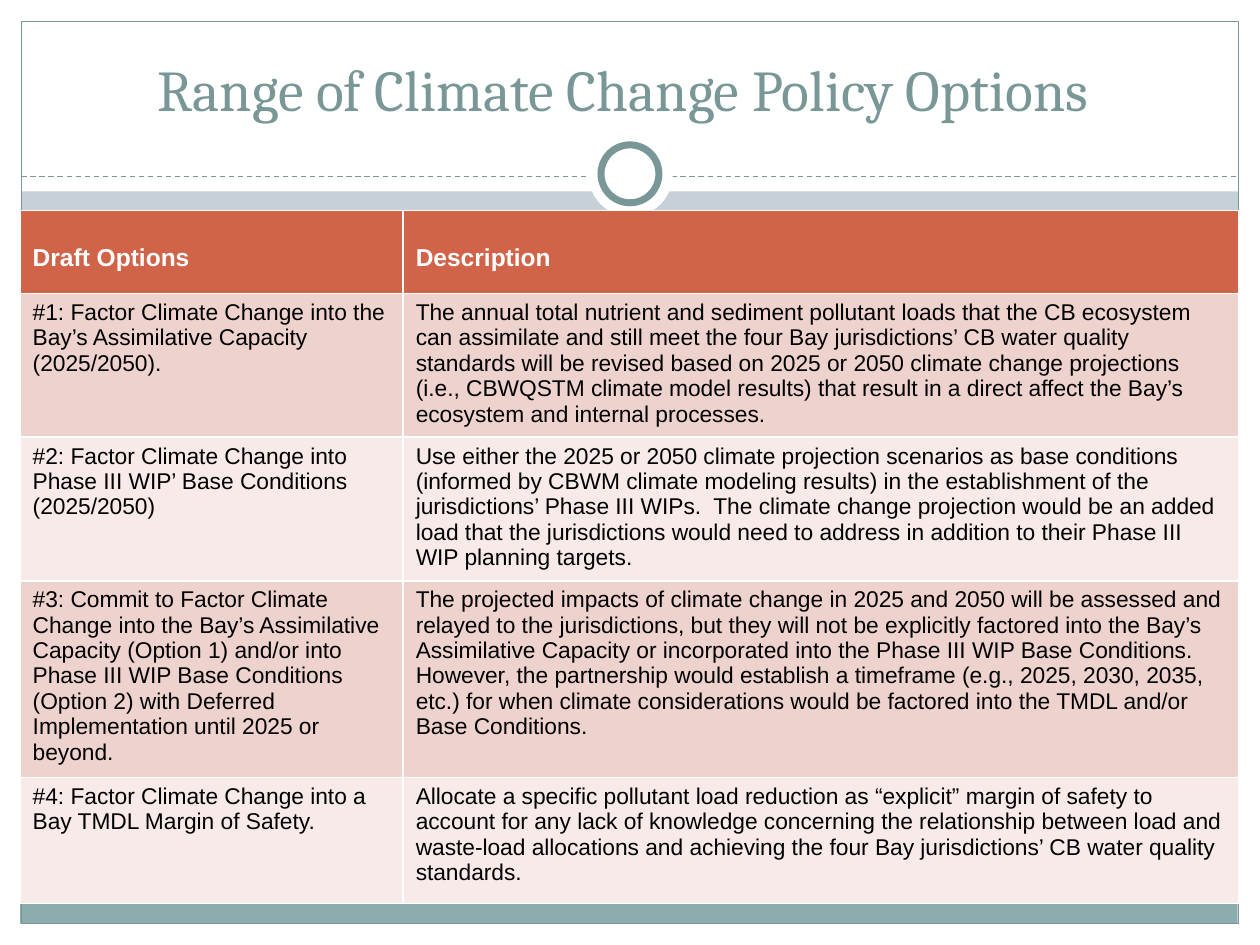
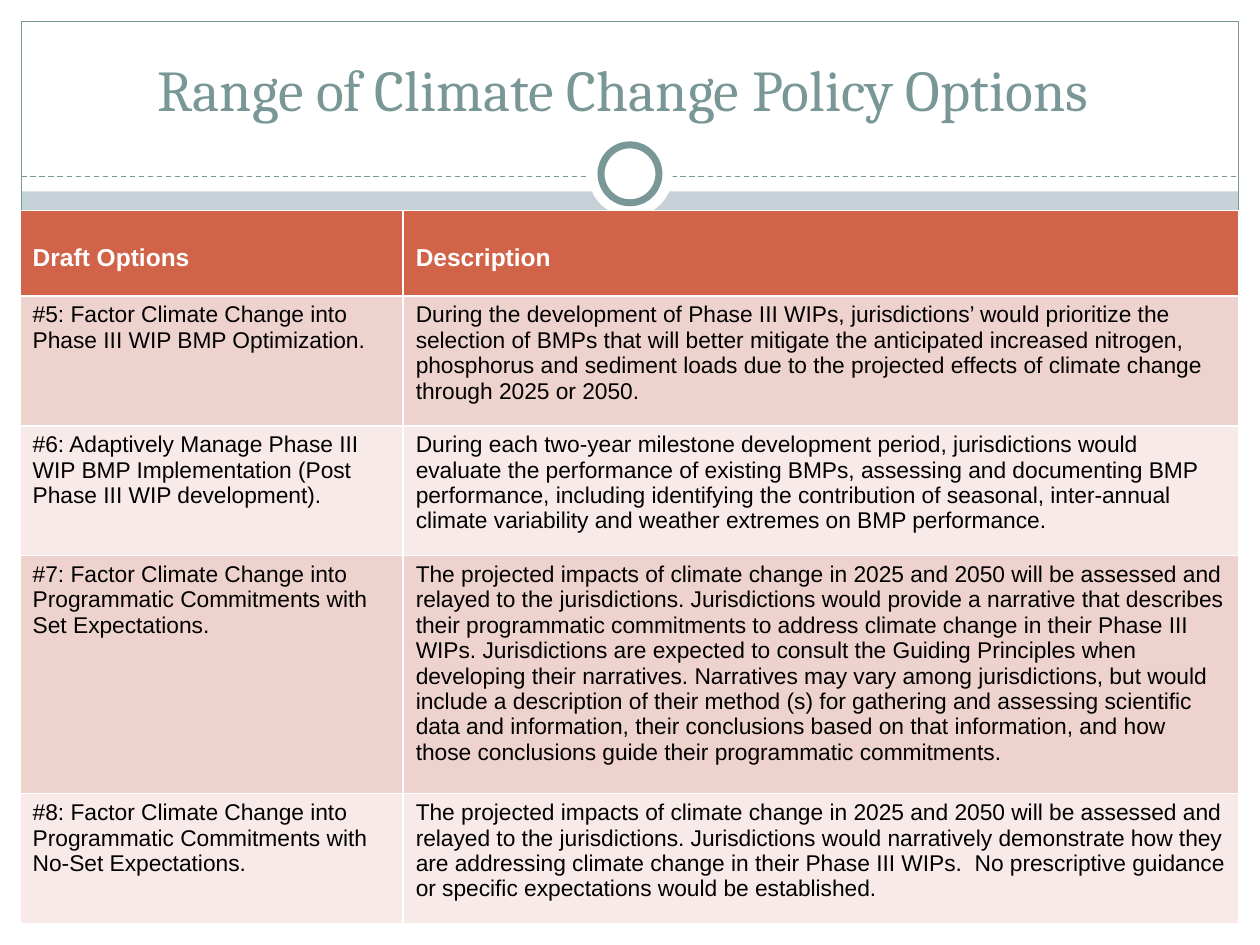
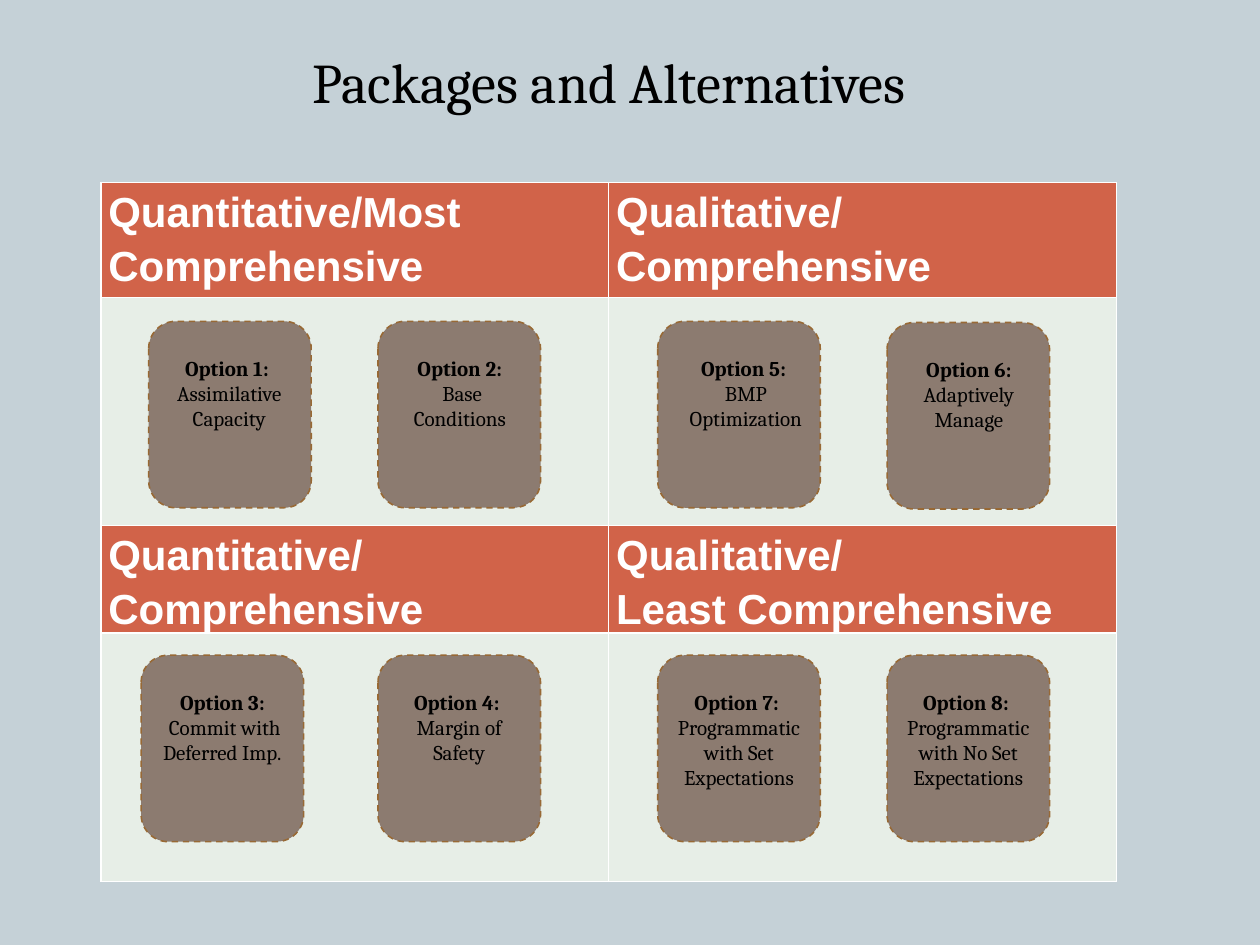
from lxml import etree
from pptx import Presentation
from pptx.dml.color import RGBColor
from pptx.enum import dml, shapes, text
from pptx.oxml import ns
from pptx.util import Inches, Pt

WHITE = RGBColor(0xFF, 0xFF, 0xFF)
BLACK = RGBColor(0, 0, 0)
MIST = RGBColor(0xC5, 0xD1, 0xD7)
TEAL = RGBColor(0x7A, 0x97, 0x98)
SEA = RGBColor(0x8C, 0xAD, 0xAE)
RUST = RGBColor(0xD1, 0x63, 0x49)
ROSE = RGBColor(0xEE, 0xD2, 0xCE)
BLUSH = RGBColor(0xF7, 0xEA, 0xE8)
MINT = RGBColor(0xE7, 0xEE, 0xE7)
TAUPE = RGBColor(0x8C, 0x7B, 0x70)
BROWN = RGBColor(0x98, 0x69, 0x35)
RECT = shapes.MSO_SHAPE.RECTANGLE
OVAL = shapes.MSO_SHAPE.OVAL
ROUND = shapes.MSO_SHAPE.ROUNDED_RECTANGLE
CENTER = text.PP_ALIGN.CENTER

HEADS = ("Draft Options", "Description")
FIRST = [
    ("#1: Factor Climate Change into the Bay’s Assimilative Capacity (2025/2050).",
     "The annual total nutrient and sediment pollutant loads that the CB ecosystem can "
     "assimilate and still meet the four Bay jurisdictions’ CB water quality standards will "
     "be revised based on 2025 or 2050 climate change projections (i.e., CBWQSTM climate "
     "model results) that result in a direct affect the Bay’s ecosystem and internal "
     "processes."),
    ("#2: Factor Climate Change into Phase III WIP’ Base Conditions (2025/2050)",
     "Use either the 2025 or 2050 climate projection scenarios as base conditions (informed "
     "by CBWM climate modeling results) in the establishment of the jurisdictions’ Phase III "
     "WIPs.  The climate change projection would be an added load that the jurisdictions "
     "would need to address in addition to their Phase III WIP planning targets."),
    ("#3: Commit to Factor Climate Change into the Bay’s Assimilative Capacity (Option 1) "
     "and/or into Phase III WIP Base Conditions (Option 2) with Deferred Implementation "
     "until 2025 or beyond.",
     "The projected impacts of climate change in 2025 and 2050 will be assessed and relayed "
     "to the jurisdictions, but they will not be explicitly factored into the Bay’s "
     "Assimilative Capacity or incorporated into the Phase III WIP Base Conditions.  "
     "However, the partnership would establish a timeframe (e.g., 2025, 2030, 2035, etc.) "
     "for when climate considerations would be factored into the TMDL and/or Base "
     "Conditions."),
    ("#4: Factor Climate Change into a Bay TMDL Margin of Safety.",
     "Allocate a specific pollutant load reduction as “explicit” margin of safety to account "
     "for any lack of knowledge concerning the relationship between load and waste-load "
     "allocations and achieving the four Bay jurisdictions’ CB water quality standards."),
]
SECOND = [
    ("#5: Factor Climate Change into Phase III WIP BMP Optimization.",
     "During the development of Phase III WIPs, jurisdictions’ would prioritize the "
     "selection of BMPs that will better mitigate the anticipated increased nitrogen, "
     "phosphorus and sediment loads due to the projected effects of climate change through "
     "2025 or 2050."),
    ("#6: Adaptively Manage Phase III WIP BMP Implementation (Post Phase III WIP "
     "development).",
     "During each two-year milestone development period, jurisdictions would evaluate the "
     "performance of existing BMPs, assessing and documenting BMP performance, including "
     "identifying the contribution of seasonal, inter-annual climate variability and weather "
     "extremes on BMP performance."),
    ("#7: Factor Climate Change into Programmatic Commitments with Set Expectations.",
     "The projected impacts of climate change in 2025 and 2050 will be assessed and relayed "
     "to the jurisdictions. Jurisdictions would provide a narrative that describes their "
     "programmatic commitments to address climate change in their Phase III WIPs. "
     "Jurisdictions are expected to consult the Guiding Principles when developing their "
     "narratives. Narratives may vary among jurisdictions, but would include a description "
     "of their method (s) for gathering and assessing scientific data and information, their "
     "conclusions based on that information, and how those conclusions guide their "
     "programmatic commitments."),
    ("#8: Factor Climate Change into Programmatic Commitments with No-Set Expectations.",
     "The projected impacts of climate change in 2025 and 2050 will be assessed and relayed "
     "to the jurisdictions. Jurisdictions would narratively demonstrate how they are "
     "addressing climate change in their Phase III WIPs.  No prescriptive guidance or "
     "specific expectations would be established."),
]
GROUPS = [
    ("Quantitative/Most Comprehensive", "Qualitative/\nComprehensive"),
    ("", ""),
    ("Quantitative/\nComprehensive", "Qualitative/\nLeast Comprehensive"),
    ("", ""),
]
CARDS = [
    (1.18, 2.55, 0.09, 1.1, "Option 1: ", "Assimilative Capacity"),
    (3, 2.55, 0.1, 1.1, "Option 2:", " Base Conditions"),
    (5.22, 2.55, 0.1, 1.2, "Option 5: ", "BMP Optimization"),
    (7.04, 2.56, 0.1, 1.1, "Option 6:", "Adaptively Manage"),
    (1.12, 5.2, 0, 1.29, "Option 3:", " Commit with Deferred Imp."),
    (3, 5.2, 0.08, 1.13, "Option 4: ", "Margin of Safety"),
    (5.22, 5.2, 0, 1.29, "Option 7: ", "Programmatic with Set Expectations"),
    (7.04, 5.2, 0, 1.29, "Option 8: ", "Programmatic with No Set Expectations"),
]


def style(para, size, color, face, bold=False):
    """Set the font of a paragraph."""
    font = para.font
    font.size, font.name, font.bold = Pt(size), face, bold
    font.color.rgb = color


def add_box(host, kind, at, fill=None, line=None, width=0.75):
    """Add a preset shape with an optional fill and line."""
    box = host.add_shape(kind, *map(Inches, at))
    box.shadow.inherit = False
    if fill is None:
        box.fill.background()
    else:
        box.fill.solid()
        box.fill.fore_color.rgb = fill
    if line is None:
        box.line.fill.background()
    else:
        box.line.color.rgb = line
        box.line.width = Pt(width)
    return box


def add_rule(host, left, right, top):
    """Add a dashed horizontal line."""
    rule = host.add_connector(shapes.MSO_CONNECTOR.STRAIGHT, Inches(left), Inches(top),
                              Inches(right), Inches(top))
    rule.line.color.rgb = TEAL
    rule.line.width = Pt(0.75)
    rule.line.dash_style = dml.MSO_LINE.DASH
    etree.SubElement(rule.element.spPr, ns.qn("a:effectLst"))


def add_frame(host):
    """Draw the white margins, footer band, border and ring."""
    for at in ((0, 7.33, 10, 0.17), (0, 0, 10, 1.52), (0, 0, 0.17, 7.5), (9.83, 0, 0.17, 7.5)):
        add_box(host, RECT, at, WHITE)
    add_box(host, RECT, (0.16, 6.99, 9.66, 0.34), SEA)
    add_box(host, RECT, (0.17, 0.17, 9.66, 7.16), line=TEAL)
    add_rule(host, 0.17, 9.83, 1.4)
    add_box(host, OVAL, (4.67, 1.05, 0.67, 0.67), WHITE)
    add_box(host, OVAL, (4.77, 1.15, 0.46, 0.46), WHITE, TEAL, 4)


def set_title(slide, words, at, size, color, anchor, pad):
    """Fill the title placeholder and bring it to the front."""
    title = slide.shapes.title
    title.left, title.top, title.width, title.height = map(Inches, at)
    frame = title.text_frame
    frame.text = words
    frame.word_wrap = True
    frame.auto_size = text.MSO_AUTO_SIZE.NONE
    frame.vertical_anchor = anchor
    frame.margin_left = frame.margin_right = Inches(0.1)
    frame.margin_top = frame.margin_bottom = Inches(pad)
    para = frame.paragraphs[0]
    para.alignment = CENTER
    style(para, size, color, "Cambria")
    slide.shapes.element.append(title.element)


def add_grid(host, left, top, cols, rows):
    """Add an empty table with the given column widths and row heights."""
    grid = host.add_table(len(rows), len(cols), Inches(left), Inches(top),
                          Inches(sum(cols)), Inches(sum(rows))).table
    for col, width in zip(grid.columns, cols):
        col.width = Inches(width)
    for row, height in zip(grid.rows, rows):
        row.height = Inches(height)
    return grid


def fill_cell(cell, words, fill, size, color, bold=False, gap=None):
    """Write and format one table cell."""
    cell.fill.solid()
    cell.fill.fore_color.rgb = fill
    cell.text = words
    for para in cell.text_frame.paragraphs:
        style(para, size, color, "Arial", bold)
        para.line_spacing = gap


def add_options(deck, rows, data):
    """Build a slide that lists draft options in a table."""
    slide = deck.slides.add_slide(deck.slide_layouts[5])
    add_frame(slide.shapes)
    set_title(slide, "Range of Climate Change Policy Options ", (0.33, 0.25, 9.33, 0.83),
              33, TEAL, text.MSO_ANCHOR.BOTTOM, 0.1)
    grid = add_grid(slide.shapes, 0.16, 1.67, (3.04, 6.63), rows)
    for col, head in enumerate(HEADS):
        cell = grid.cell(0, col)
        fill_cell(cell, head, RUST, 14, WHITE, True)
        cell.margin_top = Inches(0.27)
    for row, pair in enumerate(data, 1):
        for col, words in enumerate(pair):
            fill_cell(grid.cell(row, col), words, ROSE if row % 2 else BLUSH, 13, BLACK)


def add_card(host, left, top, shift, width, name, words):
    """Add a dashed card with a bold name and a short label."""
    group = host.add_group_shape().shapes
    card = add_box(group, ROUND, (left, top, 1.29, 1.48), TAUPE, BROWN, 0.9)
    card.line.dash_style = dml.MSO_LINE.DASH
    label = group.add_textbox(*map(Inches, (left + shift, top + 0.22, width, 0.71)))
    frame = label.text_frame
    frame.word_wrap = True
    frame.text = f"{name}\n{words}"
    for para, bold in zip(frame.paragraphs, (True, False)):
        para.alignment = CENTER
        style(para, 12, BLACK, "Cambria", bold)


def add_packages(deck):
    """Build the slide that sorts the options into four packages."""
    slide = deck.slides.add_slide(deck.slide_layouts[5])
    grid = add_grid(slide.shapes, 0.8, 1.45, (4.03, 4.03), (0.91, 1.81, 0.77, 1.97))
    for row, pair in enumerate(GROUPS):
        for col, words in enumerate(pair):
            cell = grid.cell(row, col)
            fill_cell(cell, words, MINT if row % 2 else RUST, 24, WHITE, True, 1.15)
            cell.margin_left = cell.margin_right = Inches(0.06)
            cell.margin_top = cell.margin_bottom = 0
    for card in CARDS:
        add_card(slide.shapes, *card)
    set_title(slide, "Packages and Alternatives", (1, 0.33, 7.67, 0.64),
              32, BLACK, text.MSO_ANCHOR.TOP, 0.05)


def main():
    """Build and save the deck."""
    deck = Presentation()
    deck.slide_width, deck.slide_height = Inches(10), Inches(7.5)
    back = deck.slide_master.background.fill
    back.solid()
    back.fore_color.rgb = MIST
    add_options(deck, (0.66, 1.14, 1.14, 1.56, 1), FIRST)
    add_options(deck, (0.68, 1.03, 1.03, 1.89, 1.03), SECOND)
    add_packages(deck)
    deck.save("out.pptx")


if __name__ == "__main__":
    main()
